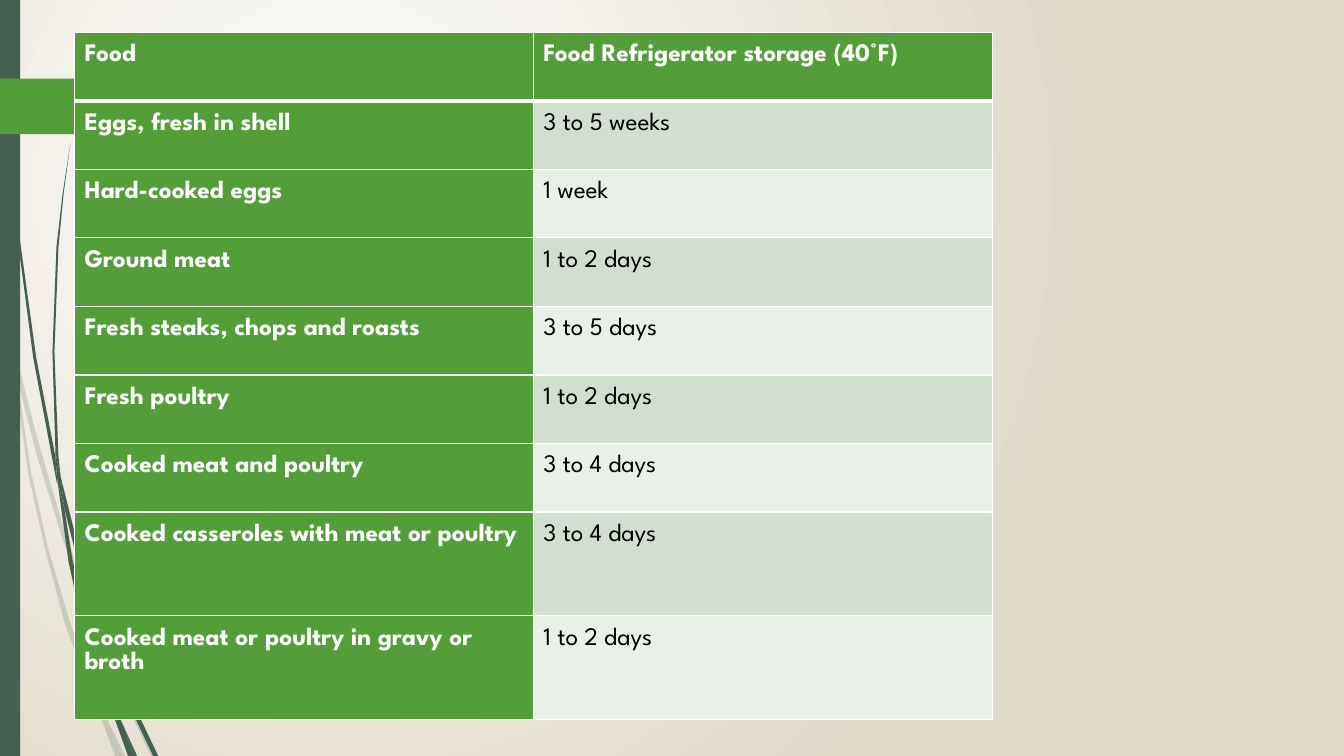
import lxml.etree
import pptx
import pptx.dml.color
import pptx.enum.shapes
import pptx.oxml.ns
import pptx.util

Inches = pptx.util.Inches
Pt = pptx.util.Pt
RGBColor = pptx.dml.color.RGBColor
qn = pptx.oxml.ns.qn

WHITE = RGBColor(0xFF, 0xFF, 0xFF)
BLACK = RGBColor(0x00, 0x00, 0x00)
SAND = RGBColor(0xE0, 0xD9, 0xC8)
PINE = RGBColor(0x45, 0x5F, 0x51)
GREEN = RGBColor(0x54, 0x9E, 0x39)
BAND_DARK = RGBColor(0xD1, 0xDF, 0xCE)
BAND_LIGHT = RGBColor(0xE9, 0xF0, 0xE8)
FONT = "League Spartan"

ROWS = [
    ("Food", "Food Refrigerator storage (40°F)"),
    ("Eggs, fresh in shell", "3 to 5 weeks"),
    ("Hard-cooked eggs", "1 week"),
    ("Ground meat", "1 to 2 days"),
    ("Fresh steaks, chops and roasts", "3 to 5 days"),
    ("Fresh poultry", "1 to 2 days"),
    ("Cooked meat and poultry", "3 to 4 days"),
    ("Cooked casseroles with meat or poultry", "3 to 4 days"),
    ("Cooked meat or poultry in gravy or broth", "1 to 2 days"),
]
ROW_HEIGHTS = [0.68] * 7 + [1.03] * 2

PALE_BLADES = [
    [(0.11, 3.5), (0.09, 3.22), (0, 2.82), (0, 2.99), (0.1, 3.44)],
    [(0.58, 5.22), (0.84, 5.99), (0.85, 5.86), (0.62, 5.2), (0.37, 4.35),
     (0.14, 3.45), (0.17, 3.76), (0.36, 4.5)],
    [(0.92, 6.07), (0.88, 5.96), (0.88, 6.1), (1.23, 6.94), (1.5, 7.5),
     (1.55, 7.5), (1.27, 6.92)],
    [(1.19, 7.5), (1.24, 7.5), (1.05, 7.11)],
    [(0.93, 6.83), (0.7, 6.19), (0.48, 5.45), (0.31, 4.69), (0.17, 3.76),
     (0.11, 3.5), (0.28, 4.7), (0.45, 5.46), (0.65, 6.21), (0.92, 6.93),
     (1.01, 7.14), (0.99, 7.07)],
    [(1.01, 7.14), (1.14, 7.5), (1.19, 7.5)],
    [(0.96, 6.92), (0.93, 6.83), (0.99, 7.07), (1.01, 7.14), (1.19, 7.5),
     (1.05, 7.11)],
]
DARK_BLADES = [
    [(0.07, 1.1), (0.17, 2.33), (0.33, 3.55), (0.56, 4.77), (0.57, 4.81),
     (0.55, 4.53), (0.36, 3.55), (0.19, 2.32), (0.08, 1.09), (0.05, 0.48),
     (0.04, 0), (0.03, 0), (0.04, 0.48)],
    [(0.88, 5.92), (1.06, 6.45), (1.06, 6.31), (0.93, 5.9), (0.75, 5.32),
     (0.6, 4.72), (0.64, 5.05), (0.75, 5.49)],
    [(1.13, 6.49), (1.1, 6.41), (1.11, 6.56), (1.32, 7.08), (1.52, 7.5),
     (1.57, 7.5), (1.36, 7.06)],
    [(1.1, 6.91), (0.98, 6.57), (0.84, 6.07), (0.72, 5.56), (0.64, 5.05),
     (0.57, 4.77), (0.68, 5.57), (0.79, 6.08), (0.93, 6.59), (1.17, 7.22),
     (1.16, 7.17)],
    [(0.6, 4.72), (0.58, 4.53), (0.54, 3.49), (0.58, 2.45), (0.63, 1.93),
     (0.7, 1.41), (0.62, 1.93), (0.56, 2.45), (0.52, 3.49), (0.55, 4.49)],
    [(1.33, 7.5), (1.36, 7.5), (1.22, 7.19)],
    [(0.57, 4.77), (0.64, 5.05), (0.6, 4.72), (0.55, 4.49), (0.55, 4.53)],
    [(1.17, 7.22), (1.27, 7.5), (1.31, 7.5)],
    [(1.16, 7.06), (1.1, 6.91), (1.16, 7.17), (1.17, 7.22), (1.3, 7.5),
     (1.33, 7.5), (1.22, 7.19)],
]


def paint(sp, color):
    """Give a shape a flat fill without outline or shadow."""
    sp.fill.solid()
    sp.fill.fore_color.rgb = color
    sp.line.fill.background()
    sp.shadow.inherit = False


def add_background(s):
    """Fill the background with a round gradient from white to sand."""
    fill = s.background.fill
    fill.gradient()
    for stop, color, position in zip(fill.gradient_stops, (WHITE, SAND), (0, 1)):
        stop.color.rgb = color
        stop.position = position
    lin = next(s.element.iter(qn("a:lin")))
    grad = lin.getparent()
    grad.remove(lin)
    circle = lxml.etree.SubElement(grad, qn("a:path"), path="circle")
    lxml.etree.SubElement(circle, qn("a:fillToRect"),
                          l="50000", t="50000", r="100000", b="100000")


def add_blades(s, x, y, blades, opacity):
    """Draw grass blades from outlines measured from the corner x, y."""
    for blade in blades:
        points = [(Inches(x + dx), Inches(y + dy)) for dx, dy in blade]
        builder = s.shapes.build_freeform(*points[0])
        builder.add_line_segments(points[1:], close=True)
        sp = builder.convert_to_shape()
        paint(sp, PINE)
        if opacity < 100:
            color = next(sp.element.spPr.iter(qn("a:srgbClr")))
            lxml.etree.SubElement(color, qn("a:alpha"), val=str(opacity * 1000))


def add_sidebar(s, x, y, h):
    """Draw the grass, the dark edge strip and the green tag."""
    add_blades(s, x, y, PALE_BLADES, 20)
    add_blades(s, x, y, DARK_BLADES, 100)
    kinds = pptx.enum.shapes.MSO_SHAPE
    strip = s.shapes.add_shape(kinds.RECTANGLE, Inches(x), Inches(y),
                               Inches(0.2), Inches(h))
    paint(strip, PINE)
    tag = s.shapes.add_shape(kinds.PENTAGON, Inches(x), Inches(y + 0.78),
                             Inches(1.74), Inches(0.55))
    tag.adjustments[0] = 0.47
    paint(tag, GREEN)


def set_borders(cell, top, bottom):
    """Draw white cell borders, with the top and bottom widths in points."""
    tc_pr = cell._tc.get_or_add_tcPr()
    for side, width in (("L", 1), ("R", 1), ("T", top), ("B", bottom)):
        ln = lxml.etree.SubElement(tc_pr, qn("a:ln" + side), w=str(Pt(width)))
        fill = lxml.etree.SubElement(ln, qn("a:solidFill"))
        lxml.etree.SubElement(fill, qn("a:srgbClr"), val=str(WHITE))


def fill_cell(cell, text, row, col):
    """Write one cell in the style of its row and column."""
    heading = row == 0 or col == 0
    set_borders(cell, 3 if row == 1 else 1, 3 if row == 0 else 1)
    cell.fill.solid()
    band = BAND_DARK if row % 2 else BAND_LIGHT
    cell.fill.fore_color.rgb = GREEN if heading else band
    cell.margin_left = cell.margin_right = Inches(0.1)
    cell.margin_top = cell.margin_bottom = Inches(0.1)
    p = cell.text_frame.paragraphs[0]
    p.line_spacing = 1.07
    p.space_after = Pt(8)
    r = p.add_run()
    r.text = text
    r.font.name = FONT
    r.font.size = Pt(18)
    r.font.bold = heading
    r.font.color.rgb = WHITE if heading else BLACK


def add_storage_table(s, x, y, w, h):
    """Place the food storage table in the given box."""
    table = s.shapes.add_table(len(ROWS), 2, Inches(x), Inches(y),
                               Inches(w), Inches(h)).table
    for column in table.columns:
        column.width = Inches(w / 2)
    for i, (texts, height) in enumerate(zip(ROWS, ROW_HEIGHTS)):
        table.rows[i].height = Inches(height)
        for j, text in enumerate(texts):
            fill_cell(table.cell(i, j), text, i, j)


def main():
    """Build the slide and save it."""
    prs = pptx.Presentation()
    prs.slide_width = Inches(13.33)
    prs.slide_height = Inches(7.5)
    s = prs.slides.add_slide(prs.slide_layouts[6])
    add_background(s)
    add_sidebar(s, 0, 0, 7.5)
    add_storage_table(s, 0.74, 0.32, 9.1, sum(ROW_HEIGHTS))
    prs.save("out.pptx")


if __name__ == "__main__":
    main()
